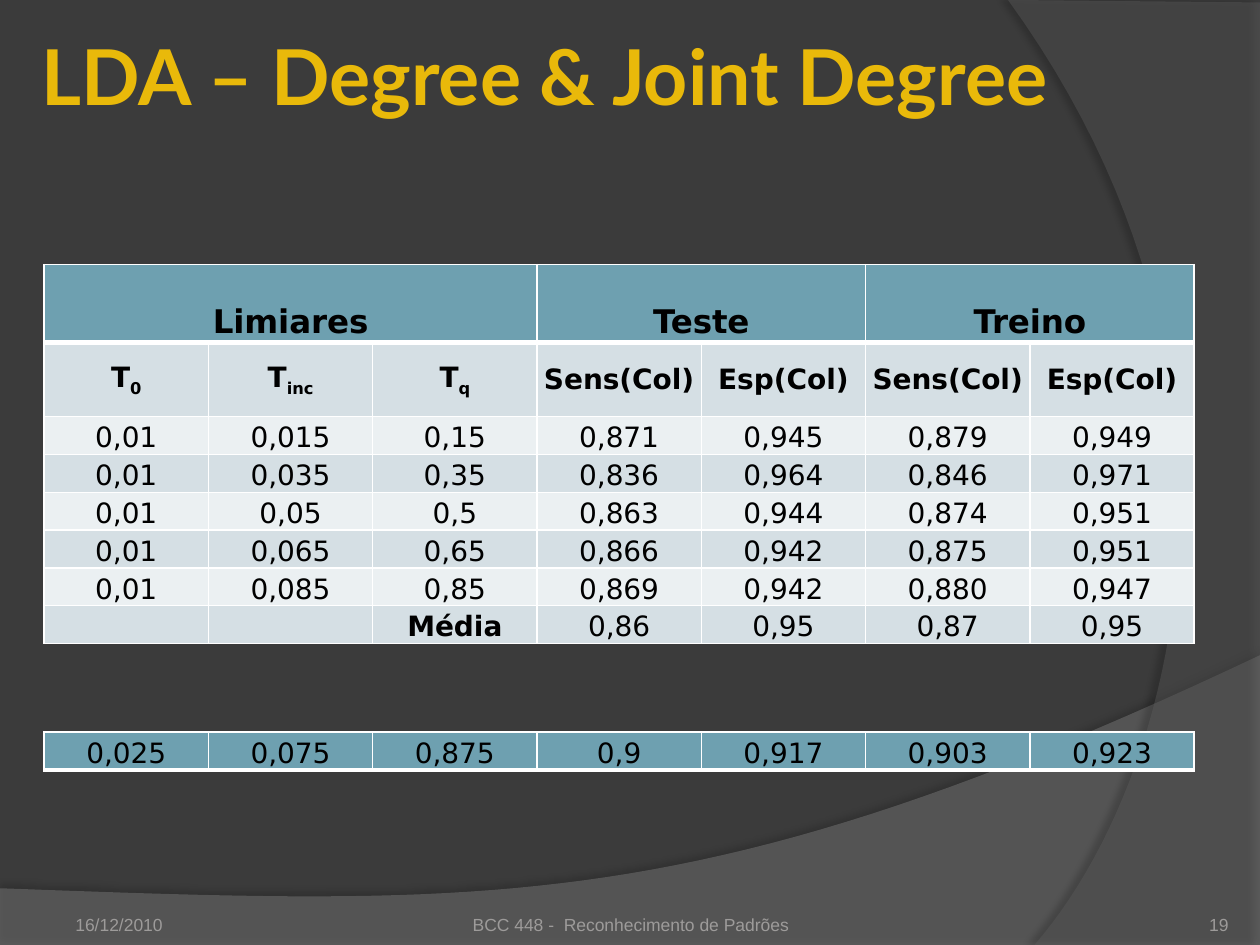
"""Build the LDA results slide with its two threshold tables."""
from lxml.etree import SubElement as Sub
from pptx import Presentation
from pptx.dml.color import RGBColor
from pptx.enum.text import MSO_ANCHOR as Anchor, PP_ALIGN as Align
from pptx.oxml import parse_xml
from pptx.oxml.ns import nsdecls, qn
from pptx.util import Inches, Pt

rgb = RGBColor.from_string


def style(run, face, size, tint, bold=False):
    """Set the font of a run."""
    run.font.name, run.font.size, run.font.bold = face, Pt(size), bold
    run.font.color.rgb = rgb(tint)


def grid(top, rows, highs, fills, head):
    """Add a table whose first rows, counted by head, are centred and bold."""
    wide = 9.13
    table = slide.shapes.add_table(len(rows), 7, Inches(0.35), Inches(top),
                                   Inches(wide), Inches(sum(highs))).table
    for col in table.columns:
        col.width = Inches(wide / 7)
    for r, row in enumerate(rows):
        table.rows[r].height = Inches(highs[r])
        for c, text in enumerate(row):
            cell = table.cell(r, c)
            cell.margin_left = cell.margin_right = cell.margin_top = Inches(0.01)
            cell.margin_bottom = 0
            cell.vertical_anchor = Anchor.MIDDLE if r < head else Anchor.BOTTOM
            edges = {"L": 1, "R": 1, "T": 3 if r == 1 else 1, "B": 3 if r == 0 else 1}
            for side, pts in edges.items():
                line = Sub(cell._tc.get_or_add_tcPr(), qn("a:ln" + side), w=str(Pt(pts)))
                Sub(Sub(line, qn("a:solidFill")), qn("a:srgbClr"), val="FFFFFF")
            cell.fill.solid()
            cell.fill.fore_color.rgb = rgb(fills[r])
            base, _, low = text.partition("_")
            cell.text_frame.text = base
            para = cell.text_frame.paragraphs[0]
            para.alignment = Align.CENTER
            if low:
                para.add_run().text = low
            title = head and r == 0
            for i, run in enumerate(para.runs):
                style(run, "DejaVu Sans", 32 if title else 16, "000000",
                      r < head or text == "Média")
                if title or i:
                    run.font._element.set("baseline", "-25000")
            if not text:
                Sub(para._p, qn("a:endParaRPr"), sz="1600")
    return table


deck = Presentation()
deck.slide_width, deck.slide_height = Inches(10), Inches(7.5)
slide = deck.slides.add_slide(deck.slide_layouts[5])
slide.background.fill.solid()
slide.background.fill.fore_color.rgb = rgb("3B3B3B")

bands = [
    ([(0, 7.51), (10, 7.51), (10, 5.2)], [(5.59, 7.29), (3.91, 7.19), (0, 7.05)],
     "7F7F7F", 45, 35, 3.5, 270),
    ([(10, 0.02), (10, 7.5), (8.21, 7.5)], [(9.35, 6.19), (10.18, 3), (8, 0)],
     "5E5E5E", 40, 45, 4, 180),
]
steps = 48
for spot, (pts, bend, tint, alpha, dark, dist, turn) in enumerate(bands, 2):
    curve = []
    for n in range(1, steps + 1):
        t = n / steps
        parts = [(1 - t) ** 3, 3 * t * (1 - t) ** 2, 3 * t * t * (1 - t), t ** 3]
        curve.append([sum(k * p[axis] for k, p in zip(parts, [pts[-1], *bend]))
                      for axis in (0, 1)])
    pen = slide.shapes.build_freeform(*pts[0], scale=Inches(1))
    pen = slide.shapes.build_freeform(*map(Inches, pts[0]))
    pen.add_line_segments([tuple(map(Inches, p)) for p in pts[1:] + curve])
    band = pen.convert_to_shape()
    band.fill.solid()
    band.fill.fore_color.rgb = rgb(tint)
    band.line.fill.background()
    band.shadow.inherit = False
    props = band._element.spPr
    Sub(props.find(".//" + qn("a:srgbClr")), qn("a:alpha"), val=str(alpha * 1000))
    shade = Sub(props.find(qn("a:effectLst")), qn("a:outerShdw"), blurRad=str(Pt(4)),
                dist=str(Pt(dist)), dir=str(turn * 60000), rotWithShape="0")
    black = Sub(shade, qn("a:srgbClr"), val="000000")
    Sub(black, qn("a:alpha"), val=str(dark * 1000))
    slide.shapes._spTree.insert(spot, band._element)

title = slide.shapes.title
title.left, title.top = Inches(0.28), Inches(-0.03)
title.width, title.height = Inches(9.45), Inches(1.25)
frame = title.text_frame
frame.text = "LDA – Degree & Joint Degree"
frame.vertical_anchor = Anchor.MIDDLE
frame.margin_left = frame.margin_right = Inches(0.05)
frame.paragraphs[0].alignment = Align.LEFT
run = frame.paragraphs[0].runs[0]
style(run, "Lato", 44, "E9B90A", True)
stops = "".join(f'<a:gs pos="{pos * 1000}"><a:srgbClr val="{tint}"/></a:gs>'
                for pos, tint in [(0, "FFDC75"), (75, "E9B90A"), (100, "9E8700")])
glow = parse_xml(f'<a:gradFill {nsdecls("a")}><a:gsLst>{stops}</a:gsLst>'
                 '<a:lin ang="5400000" scaled="0"/></a:gradFill>')
font = run.font._element
font.replace(font.find(qn("a:solidFill")), glow)

notes = [
    (0.5, 2.33, 0.1, Align.LEFT, "16/12/2010"),
    (3.42, 3.17, 0, Align.CENTER, "BCC 448 -  Reconhecimento de Padrões"),
    (8.92, 0.83, 0, Align.RIGHT, "19"),
]
for left, wide, pad, side, text in notes:
    box = slide.shapes.add_textbox(Inches(left), Inches(7.02), Inches(wide), Inches(0.4))
    frame = box.text_frame
    frame.word_wrap = True
    frame.vertical_anchor = Anchor.BOTTOM
    frame.margin_left = frame.margin_right = Inches(pad)
    frame.margin_bottom = 0
    frame.text = text
    frame.paragraphs[0].alignment = side
    style(frame.paragraphs[0].runs[0], "Arial", 10, "9D9B9A")

rows = [
    ["Limiares", "", "", "Teste", "", "Treino", ""],
    ["T_0", "T_inc", "T_q"] + ["Sens(Col)", "Esp(Col)"] * 2,
    ["0,01", "0,015", "0,15", "0,871", "0,945", "0,879", "0,949"],
    ["0,01", "0,035", "0,35", "0,836", "0,964", "0,846", "0,971"],
    ["0,01", "0,05", "0,5", "0,863", "0,944", "0,874", "0,951"],
    ["0,01", "0,065", "0,65", "0,866", "0,942", "0,875", "0,951"],
    ["0,01", "0,085", "0,85", "0,869", "0,942", "0,880", "0,947"],
    ["", "", "Média", "0,86", "0,95", "0,87", "0,95"],
]
main = grid(2.1, rows, [0.59] * 2 + [0.3] * 6,
            ["6EA0B0", "D5DFE4"] + ["EBF0F2", "D5DFE4"] * 3, 2)
for first, last in [(0, 2), (3, 4), (5, 6)]:
    main.cell(0, first).merge(main.cell(0, last))
best = ["0,025", "0,075", "0,875", "0,9", "0,917", "0,903", "0,923"]
grid(5.81, [best], [0.3], ["6EA0B0"], 0)

deck.save("out.pptx")
